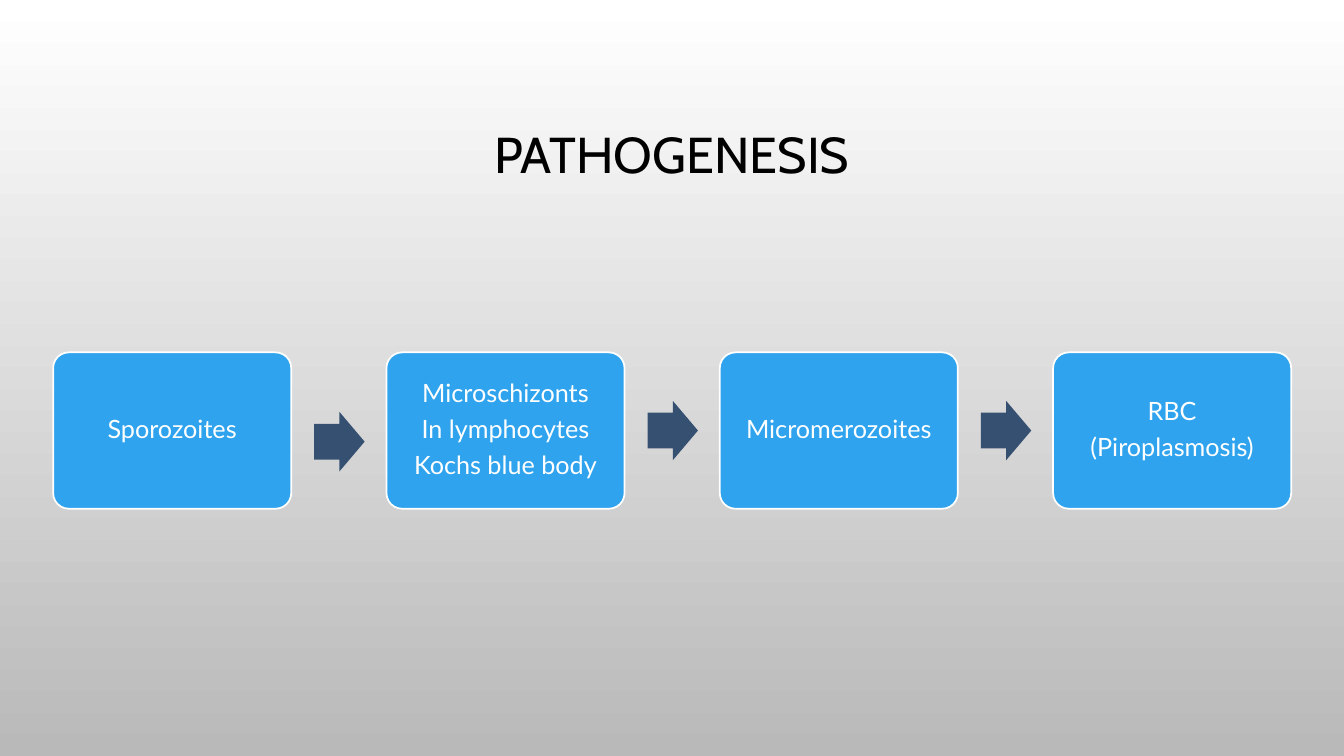
import dataclasses

import pptx
import pptx.dml.color
import pptx.enum.shapes
import pptx.enum.text
import pptx.util

Cm = pptx.util.Cm
Pt = pptx.util.Pt
Kind = pptx.enum.shapes.MSO_SHAPE

LEFT, TOP, PITCH = 1.34, 8.88, 8.4
BOX_W, BOX_H = 6.0, 3.94
ARROW_W, ARROW_H = 1.27, 1.5
ARROW_DX = 6.58


@dataclasses.dataclass
class Stage:
    lines: list[str]
    drop: float = 0  # how far the arrow after the box sits below its middle


STAGES = [
    Stage(["Sporozoites"], 0.28),
    Stage(["Microschizonts", "In lymphocytes", "Kochs blue body"]),
    Stage(["Micromerozoites"]),
    Stage(["RBC", "(Piroplasmosis)"]),
]


def rgb(code: str) -> pptx.dml.color.RGBColor:
    return pptx.dml.color.RGBColor.from_string(code)


def write(frame, lines: list[str], font: str, size: float, color: str,
          after: float = 0) -> None:
    """Fill a text frame with centred lines, one paragraph each."""
    frame.word_wrap = True
    frame.vertical_anchor = pptx.enum.text.MSO_ANCHOR.MIDDLE
    for i, line in enumerate(lines):
        para = frame.add_paragraph() if i else frame.paragraphs[0]
        para.alignment = pptx.enum.text.PP_ALIGN.CENTER
        para.line_spacing = 0.9
        para.space_before = Pt(0)
        para.space_after = Pt(after)
        run = para.add_run()
        run.text = line
        run.font.name = font
        run.font.size = Pt(size)
        run.font.color.rgb = rgb(color)


def place(shape, left: float, top: float, width: float, height: float) -> None:
    shape.left, shape.top = Cm(left), Cm(top)
    shape.width, shape.height = Cm(width), Cm(height)


def add_form(slide, kind, left: float, top: float, width: float,
             height: float, fill: str, bends: list[float]):
    """Add a flat shape without a line; bends are its adjustments."""
    form = slide.shapes.add_shape(
        kind, Cm(left), Cm(top), Cm(width), Cm(height))
    form.shadow.inherit = False
    form.fill.solid()
    form.fill.fore_color.rgb = rgb(fill)
    form.line.fill.background()
    for i, bend in enumerate(bends):
        form.adjustments[i] = bend
    return form


def add_box(slide, left: float, lines: list[str]) -> None:
    box = add_form(slide, Kind.ROUNDED_RECTANGLE, left, TOP, BOX_W, BOX_H,
                   "2FA3EE", [0.1])
    box.line.color.rgb = rgb("FFFFFF")
    box.line.width = Pt(1.25)
    frame = box.text_frame
    frame.margin_left = frame.margin_right = Cm(0.29)
    frame.margin_top = frame.margin_bottom = Cm(0.29)
    write(frame, lines, "Lato", 18, "FFFFFF", after=6.3)


def add_arrow(slide, left: float, drop: float) -> None:
    top = TOP + (BOX_H - ARROW_H) / 2 + drop
    add_form(slide, Kind.RIGHT_ARROW, left, top, ARROW_W, ARROW_H,
             "355071", [0.6, 0.5])


def shade(slide) -> None:
    """Give the slide a top to bottom gradient."""
    fill = slide.background.fill
    fill.gradient()
    fill.gradient_angle = 270
    for stop, color in zip(fill.gradient_stops, ["FFFFFF", "B9B9B9"]):
        stop.color.rgb = rgb(color)


def main() -> None:
    deck = pptx.Presentation()
    deck.slide_width, deck.slide_height = Cm(33.87), Cm(19.05)
    slide = deck.slides.add_slide(deck.slide_layouts[5])
    shade(slide)

    title = slide.shapes.title
    place(title, 2.54, 1.73, 28.78, 4.45)
    write(title.text_frame, ["PATHOGENESIS"], "Cabin", 36, "000000")

    for i, stage in enumerate(STAGES):
        left = LEFT + i * PITCH
        add_box(slide, left, stage.lines)
        if i < len(STAGES) - 1:
            add_arrow(slide, left + ARROW_DX, stage.drop)

    deck.save("out.pptx")


if __name__ == "__main__":
    main()
